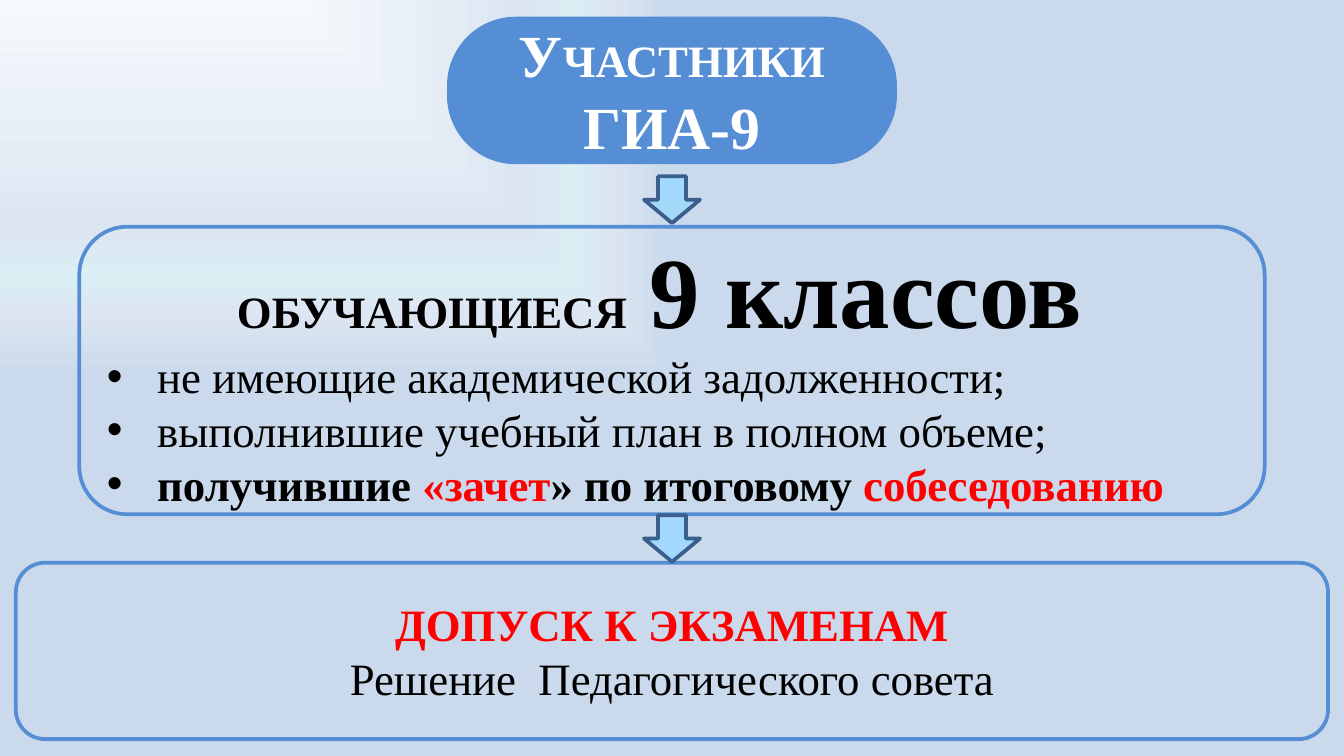
"""Builds the slide on who is admitted to the GIA-9 exams."""
from pptx import Presentation, oxml
from pptx import util as u
from pptx.dml import color
from pptx.enum import shapes, text
from pptx.oxml import ns

Pt = u.Pt
COLORS = {"blue": "558ED5", "arrow": "A3D9FB", "edge": "3A5F8C", "white": "FFFFFF",
          "black": "000000", "red": "FF0000"}
STOPS = [(0, "F6F9FC"), (60, "DCE6F2"), (74, "DBEEF4"), (83, "DCE6F2"), (100, "CAD9EB")]


def add_box(kind, left, top, width, height, fill, line):
    sp = s.shapes.add_shape(kind, Pt(left), Pt(top), Pt(width), Pt(height))
    sp.shadow.inherit = False
    if fill:
        sp.fill.solid()
        sp.fill.fore_color.rgb = color.RGBColor.from_string(COLORS[fill])
    else:
        sp.fill.background()
    sp.line.color.rgb = color.RGBColor.from_string(COLORS[line])
    sp.line.width = Pt(2)
    return sp


def write(tf, paragraphs, anchor):
    tf.word_wrap = True
    tf.auto_size = text.MSO_AUTO_SIZE.NONE
    tf.vertical_anchor = anchor
    for i, (align, runs) in enumerate(paragraphs):
        p = tf.paragraphs[0] if i == 0 else tf.add_paragraph()
        p.alignment = align
        p.space_before = Pt(0)
        for words, size, bold, name in runs:
            r = p.add_run()
            r.text = words
            r.font.name = "Times New Roman"
            r.font.size = Pt(size)
            r.font.bold = bold
            r.font.color.rgb = color.RGBColor.from_string(COLORS[name])


prs = Presentation()
prs.slide_width, prs.slide_height = Pt(720), Pt(405)
s = prs.slides.add_slide(prs.slide_layouts[1])
title, body = s.shapes.title, s.placeholders[1]

stops = "".join(f'<a:gs pos="{pos * 1000}"><a:srgbClr val="{rgb}"/></a:gs>' for pos, rgb in STOPS)
s.element.cSld.insert(0, oxml.parse_xml(
    f'<p:bg {ns.nsdecls("p", "a")}><p:bgPr><a:gradFill><a:gsLst>{stops}</a:gsLst>'
    '<a:path path="rect"><a:fillToRect r="100000" b="100000"/></a:path>'
    '</a:gradFill><a:effectLst/></p:bgPr></p:bg>'))

CENTER, LEFT = text.PP_ALIGN.CENTER, text.PP_ALIGN.LEFT
TOP, MIDDLE = text.MSO_ANCHOR.TOP, text.MSO_ANCHOR.MIDDLE
ROUNDED = shapes.MSO_SHAPE.ROUNDED_RECTANGLE

heading = add_box(ROUNDED, 240.5, 10, 239, 77, "blue", "blue")
heading.adjustments[0] = 0.465
pupils = add_box(ROUNDED, 42.5, 121.5, 635, 154, None, "blue")
admission = add_box(ROUNDED, 8.5, 301.5, 703, 94.5, None, "blue")
for top in (92, 273.5):
    arrow = add_box(shapes.MSO_SHAPE.RIGHT_ARROW, 347.5, top, 25, 30, "arrow", "edge")
    arrow.rotation = 90

for sp, left, top, width, height in ((title, 251, 9.5, 218, 77), (body, 50, 122, 620, 152)):
    sp.left, sp.top, sp.width, sp.height = Pt(left), Pt(top), Pt(width), Pt(height)
    sp.text_frame.margin_top = sp.text_frame.margin_bottom = 0
    s.shapes._spTree.append(sp._element)

write(title.text_frame, [
    (CENTER, [("У", 32, True, "white"), ("ЧАСТНИКИ ", 24, True, "white"),
              ("ГИА-9", 32, True, "white")])], MIDDLE)
write(body.text_frame, [
    (CENTER, [("ОБУЧАЮЩИЕСЯ  ", 24, True, "black"), ("9 классов ", 54, True, "black")]),
    (LEFT, [("не имеющие академической задолженности;", 24, False, "black")]),
    (LEFT, [("выполнившие учебный план в полном объеме;", 24, False, "black")]),
    (LEFT, [("получившие ", 24, True, "black"), ("«зачет", 24, True, "red"),
            ("» по итоговому ", 24, True, "black"), ("собеседованию", 24, True, "red")])], TOP)
pPr = body.text_frame.paragraphs[0]._p.get_or_add_pPr()
pPr.set("marL", "0")
pPr.set("indent", "0")
pPr.append(oxml.parse_xml(f'<a:buNone {ns.nsdecls("a")}/>'))
write(admission.text_frame, [
    (CENTER, [("ДОПУСК К ЭКЗАМЕНАМ", 24, True, "red")]),
    (CENTER, [("Решение  Педагогического совета", 24, False, "black")])], MIDDLE)

prs.save("out.pptx")
